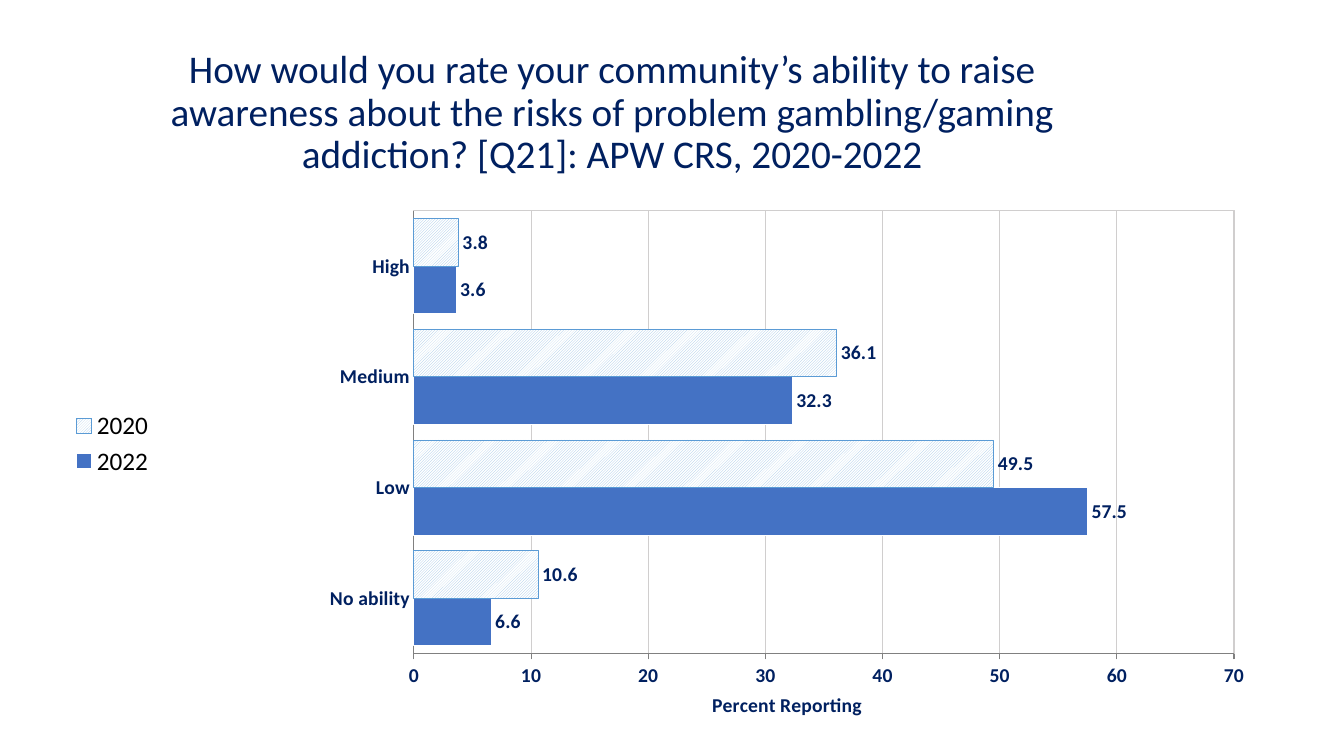
from dataclasses import dataclass

from pptx import Presentation
from pptx import util as u
from pptx.chart.chart import Chart
from pptx.chart.data import CategoryChartData
from pptx.dml.color import RGBColor
from pptx.enum import chart as ch, dml, text
from pptx.oxml import parse_xml
from pptx.oxml.ns import nsdecls
from pptx.text.text import Font

EMU_PER_PX = 9144  # 100 px to the inch
FONT = "Calibri"
COLORS = {
    "navy": "002060",
    "black": "000000",
    "white": "FFFFFF",
    "grid": "D0CECE",
    "axis": "808080",
    "blue": "4472C4",
    "hatch": "9DC3E6",
    "outline": "5B9BD5",
}
RATINGS = ("No ability", "Low", "Medium", "High")
PLOT_AREA = {"x": 0.287, "y": 0.085, "w": 0.664, "h": 0.79}


@dataclass(frozen=True)
class SurveyYear:
    name: str
    percents: tuple[float, ...]
    fill: str
    outline: str
    hatched: bool = False


YEARS = (
    SurveyYear("2022", (6.6, 57.5, 32.3, 3.6), "blue", "white"),
    SurveyYear("2020", (10.6, 49.5, 36.1, 3.8), "hatch", "outline", hatched=True),
)


def px(length: int) -> u.Emu:
    return u.Emu(length * EMU_PER_PX)


def rgb(name: str) -> RGBColor:
    return RGBColor.from_string(COLORS[name])


def apply(target: object, formats: dict[str, object]) -> None:
    for attribute, value in formats.items():
        setattr(target, attribute, value)


def style_font(font: Font, size: int, color: str, bold: bool) -> None:
    apply(font, {"name": FONT, "size": u.Pt(size), "bold": bold})
    font.color.rgb = rgb(color)


def style_line(line, color: str) -> None:
    line.color.rgb = rgb(color)
    line.width = u.Pt(0.75)


def place_plot(chart: Chart) -> None:
    """Fix the inner plot rectangle and give it a thin border."""
    plot_area = chart._chartSpace.chart.plotArea
    for layout in plot_area.findall("{*}layout"):
        plot_area.remove(layout)
    sizes = "".join(f'<c:{side} val="{part}"/>' for side, part in PLOT_AREA.items())
    plot_area.insert(0, parse_xml(
        f'<c:layout {nsdecls("c")}><c:manualLayout><c:layoutTarget val="inner"/>'
        f'<c:xMode val="edge"/><c:yMode val="edge"/>{sizes}</c:manualLayout></c:layout>'))
    plot_area.append(parse_xml(
        f'<c:spPr {nsdecls("c", "a")}><a:noFill/><a:ln w="9525"><a:solidFill>'
        f'<a:srgbClr val="{COLORS["grid"]}"/></a:solidFill></a:ln></c:spPr>'))


def style_axes(chart: Chart) -> None:
    ratings, percents = chart.category_axis, chart.value_axis
    for axis in (ratings, percents):
        style_font(axis.tick_labels.font, 14, "navy", True)
        style_line(axis.format.line, "axis")
        axis.minor_tick_mark = ch.XL_TICK_MARK.NONE
    apply(ratings, {"major_tick_mark": ch.XL_TICK_MARK.NONE,
                    "has_major_gridlines": False})
    apply(percents, {"major_tick_mark": ch.XL_TICK_MARK.OUTSIDE,
                     "has_major_gridlines": True, "minimum_scale": 0,
                     "maximum_scale": 70, "major_unit": 10})
    apply(percents.tick_labels, {"number_format": "0",
                                 "number_format_is_linked": False})
    style_line(percents.major_gridlines.format.line, "grid")
    caption = percents.axis_title.text_frame
    caption.text = "Percent Reporting"
    style_font(caption.paragraphs[0].runs[0].font, 14, "navy", True)


def style_bars(bars, year: SurveyYear) -> None:
    fill = bars.format.fill
    if year.hatched:
        fill.patterned()
        fill.pattern = dml.MSO_PATTERN.LIGHT_UPWARD_DIAGONAL
        fill.back_color.rgb = rgb("white")
    else:
        fill.solid()
    fill.fore_color.rgb = rgb(year.fill)
    style_line(bars.format.line, year.outline)
    bars.invert_if_negative = False
    labels = bars.data_labels
    apply(labels, {"show_value": True, "number_format": "0.0",
                   "number_format_is_linked": False,
                   "position": ch.XL_LABEL_POSITION.OUTSIDE_END})
    style_font(labels.font, 14, "navy", True)


def add_ratings_chart(slide) -> None:
    survey = CategoryChartData()
    survey.categories = RATINGS
    for year in YEARS:
        survey.add_series(year.name, year.percents)
    chart = slide.shapes.add_chart(
        ch.XL_CHART_TYPE.BAR_CLUSTERED, px(59), px(162), px(1225), px(556), survey).chart
    apply(chart, {"has_title": False, "has_legend": True})
    style_font(chart.font, 18, "black", False)
    apply(chart.legend, {"position": ch.XL_LEGEND_POSITION.LEFT,
                         "include_in_layout": False})
    style_font(chart.legend.font, 18, "black", False)
    apply(chart.plots[0], {"gap_width": 33, "overlap": 0, "vary_by_categories": False})
    for bars, year in zip(chart.plots[0].series, YEARS):
        style_bars(bars, year)
    style_axes(chart)
    place_plot(chart)


def set_question(slide) -> None:
    question = slide.shapes.title
    apply(question, {"left": px(92), "top": px(40), "width": px(1030), "height": px(145)})
    frame = question.text_frame
    frame.text = ("How would you rate your community’s ability to raise awareness about "
                  "the risks of problem gambling/gaming addiction? [Q21]: "
                  "APW CRS, 2020-2022")
    apply(frame, {"word_wrap": True, "auto_size": text.MSO_AUTO_SIZE.NONE,
                  "vertical_anchor": text.MSO_ANCHOR.MIDDLE})
    paragraph = frame.paragraphs[0]
    apply(paragraph, {"alignment": text.PP_ALIGN.CENTER, "line_spacing": 0.9,
                      "space_before": u.Pt(0)})
    style_font(paragraph.runs[0].font, 28, "navy", False)


def main() -> None:
    deck = Presentation()
    apply(deck, {"slide_width": px(1333), "slide_height": px(750)})
    slide = deck.slides.add_slide(deck.slide_layouts.get_by_name("Title Only"))
    set_question(slide)
    add_ratings_chart(slide)
    deck.save("out.pptx")


if __name__ == "__main__":
    main()
